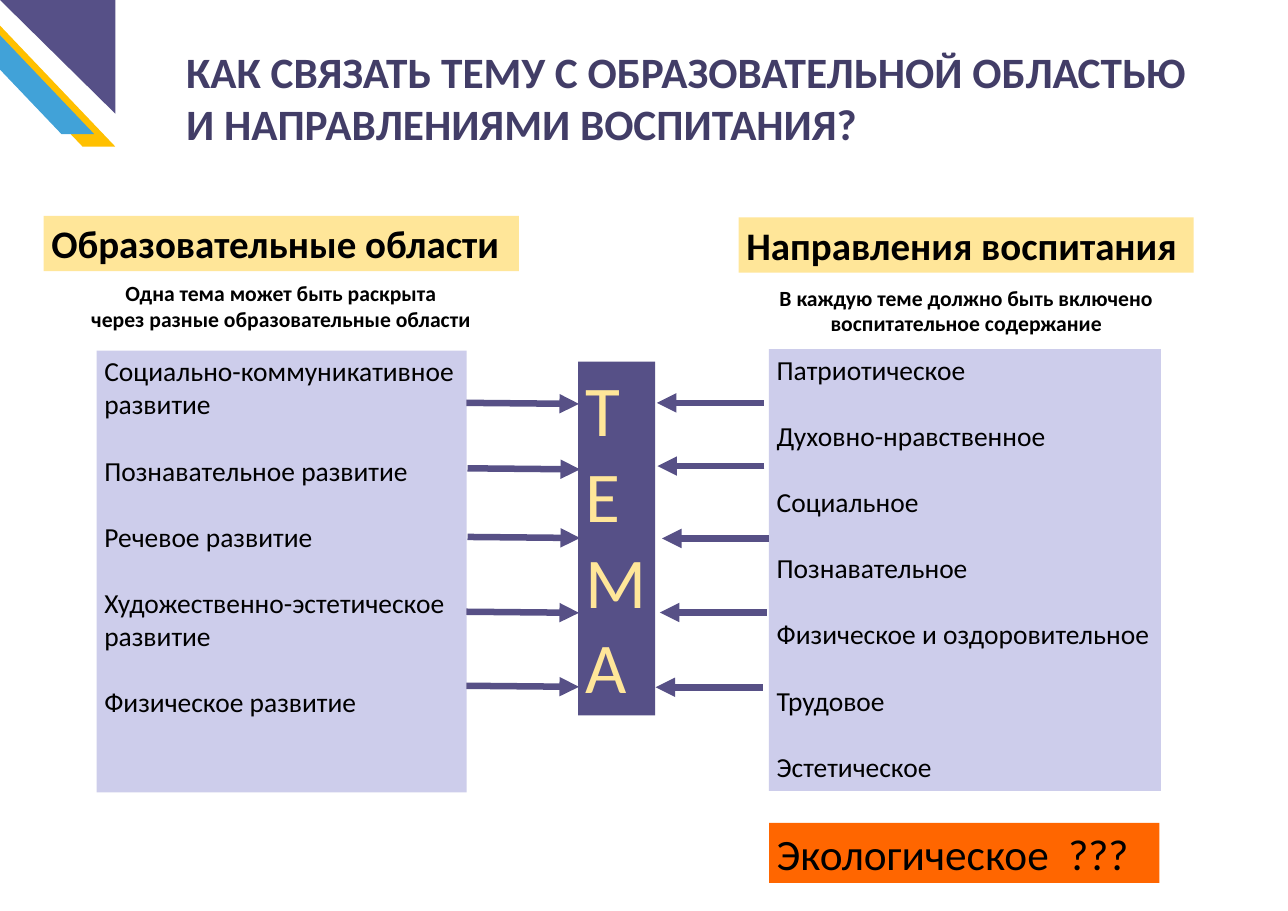
from lxml import etree
from pptx import Presentation
from pptx.dml.color import RGBColor
from pptx.enum.shapes import MSO_CONNECTOR as Line, MSO_SHAPE as Shape
from pptx.enum.text import MSO_ANCHOR as Anchor, PP_ALIGN as Align
from pptx.oxml.ns import qn
from pptx.util import Pt

VIOLET, LILAC, CREAM = "565087", "CDCDEB", "FFE699"
GAP = 30.6  # one blank line in the lists

TITLE = ["КАК СВЯЗАТЬ ТЕМУ С ОБРАЗОВАТЕЛЬНОЙ ОБЛАСТЬЮ И НАПРАВЛЕНИЯМИ ВОСПИТАНИЯ?"]
HEADS = [
    ("Образовательные области", (40.3, 199.4, 439.2, 51.1)),
    ("Направления воспитания", (682.6, 200.9, 420.5, 51.1)),
]
NOTES = [
    (["Одна тема может быть раскрыта", "через разные образовательные области"],
     (71.3, 254.9, 376.6, 55.4)),
    (["В каждую теме должно быть включено воспитательное содержание"],
     (666, 259.2, 453.6, 55.4)),
]
LISTS = [
    (["Социально-коммуникативное развитие", "Познавательное развитие",
      "Речевое развитие", "Художественно-эстетическое развитие",
      "Физическое развитие"], (89.3, 324, 342, 408.2)),
    (["Патриотическое", "Духовно-нравственное", "Социальное", "Познавательное",
      "Физическое и оздоровительное", "Трудовое", "Эстетическое"],
     (710.6, 322.6, 362.2, 408.2)),
]
# Start points of the arrows towards the topic, then their run and drop
ARROWS = [
    ([(431, 372.2), (432, 432.7), (432, 496.1), (431, 565.2), (431, 633.6)], 104, 1),
    ([(705.8, 372.2), (706.3, 430.6), (710.6, 497.5), (708.5, 565.9), (704.7, 635)],
     -98.8, 0),
]
CORNER = [
    (Shape.PARALLELOGRAM, (-56.9, -4.3, 163.4, 139.7), "FFC000", "flipH"),
    (Shape.PARALLELOGRAM, (-76.3, -15.8, 163.4, 139.7), "41A2D8", "flipH"),
    (Shape.RIGHT_TRIANGLE, (0, 0, 106.6, 105.1), VIOLET, "flipH flipV"),
]


def color(code):
    return RGBColor.from_string(code)


def block(kind, box, fill):
    item = slide.shapes.add_shape(kind, *map(Pt, box))
    item.shadow.inherit = False
    item.fill.solid()
    item.fill.fore_color.rgb = color(fill)
    item.line.fill.background()
    return item


def write(lines, box, size, ink="000000", fill=None, bold=False,
          align=Align.LEFT, gap=0):
    if fill:
        item = block(Shape.RECTANGLE, box, fill)
    else:
        item = slide.shapes.add_textbox(*map(Pt, box))
    frame = item.text_frame
    frame.word_wrap = True
    frame.vertical_anchor = Anchor.TOP
    for i, line in enumerate(lines):
        para = frame.paragraphs[0] if i == 0 else frame.add_paragraph()
        para.alignment = align
        para.space_before = Pt(gap if i else 0)
        run = para.add_run()
        run.text = line
        font = run.font
        font.name, font.size, font.bold = "Calibri", Pt(size), bold
        font.color.rgb = color(ink)


def arrow(x, y, run, drop):
    item = slide.shapes.add_connector(
        Line.STRAIGHT, Pt(x), Pt(y), Pt(x + run), Pt(y + drop))
    item.line.color.rgb = color("575086")
    item.line.width = Pt(6)
    props = item.line._get_or_add_ln()
    etree.SubElement(props, qn("a:tailEnd"), type="triangle")
    etree.SubElement(item._element.spPr, qn("a:effectLst"))


deck = Presentation()
deck.slide_width, deck.slide_height = Pt(1190.16), Pt(841.68)
slide = deck.slides.add_slide(deck.slide_layouts[6])

for kind, box, fill, flips in CORNER:
    item = block(kind, box, fill)
    if kind == Shape.PARALLELOGRAM:
        item.adjustments[0] = 0.953
    for flip in flips.split():
        item._element.spPr.xfrm.set(flip, "1")

write(TITLE, (164.9, 38.2, 960.5, 104.4), 40, ink="423D67", bold=True)
for head, box in HEADS:
    write([head], box, 36, fill=CREAM, bold=True)
for lines, box in LISTS:
    write(lines, box, 25.4, fill=LILAC, gap=GAP)
write(["Экологическое  ???"], (710.6, 760.3, 360.7, 55.4), 40, fill="FF6600")
write("ТЕМА", (534.2, 334.1, 71.3, 326.9), 66, ink=CREAM, fill=VIOLET)
for starts, run, drop in ARROWS:
    for x, y in starts:
        arrow(x, y, run, drop)
for lines, box in NOTES:
    write(lines, box, 20, bold=True, align=Align.CENTER)

deck.save("out.pptx")
